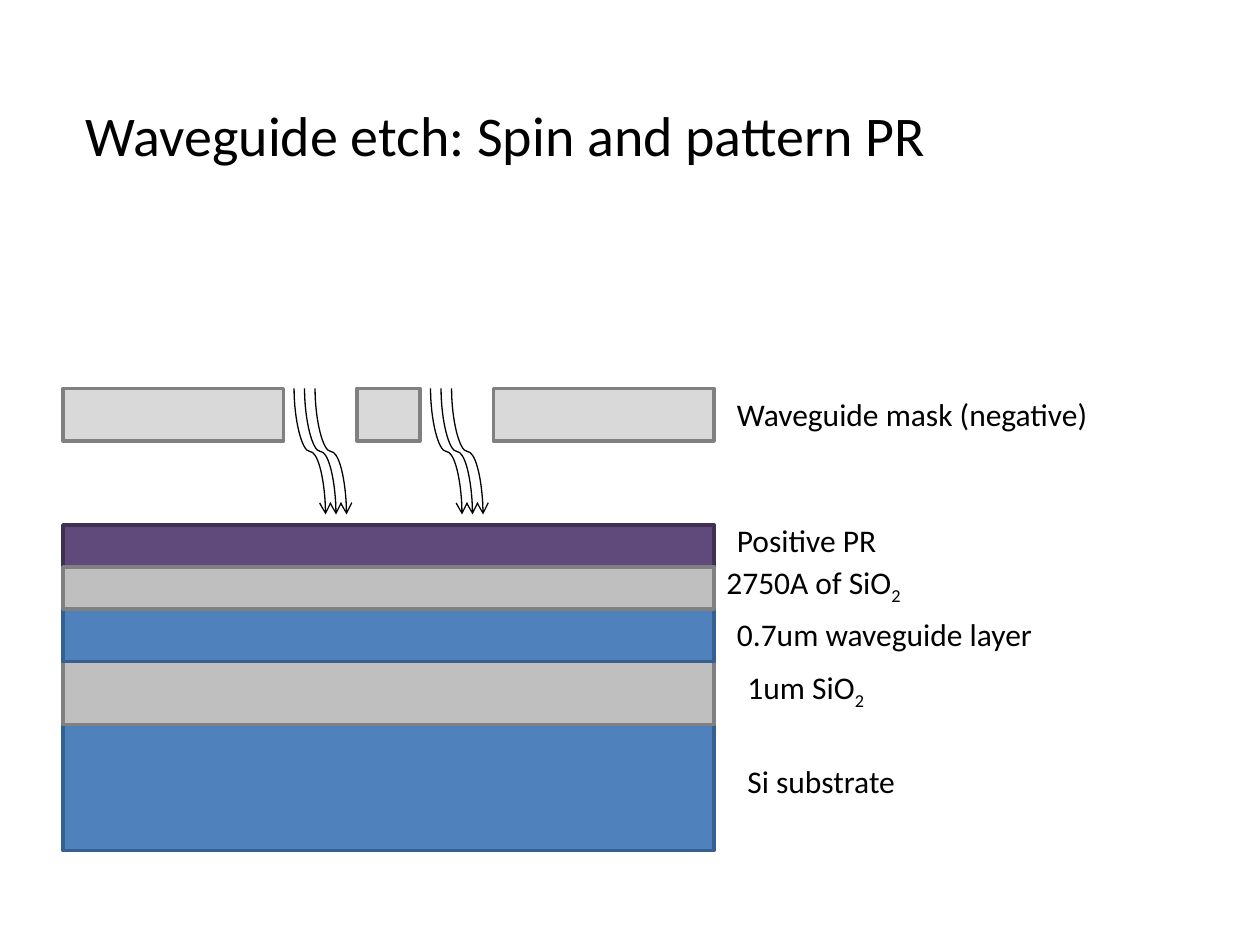
from dataclasses import dataclass

from lxml.etree import SubElement
from pptx import Presentation
from pptx.dml.color import RGBColor
from pptx.enum.shapes import MSO_CONNECTOR, MSO_SHAPE
from pptx.enum.text import MSO_AUTO_SIZE
from pptx.oxml.ns import qn
from pptx.util import Inches, Pt

CELLS_PER_INCH = 12
STACK_LEFT, STACK_WIDTH = 6, 62
MASK_TOP, MASK_HEIGHT = 37, 5
RAY_HEIGHT, RAY_SHIFT = 12, 3
LABEL_HEIGHT = 4.8


@dataclass
class Block:
    """A rectangle in grid cells."""
    left: float
    top: float
    width: float
    height: float
    fill: str
    line: str


@dataclass
class Label:
    """A caption in grid cells, with an optional subscript at its end."""
    text: str
    left: float
    top: float
    width: float
    subscript: str = ""
    size: int = 18
    height: float = LABEL_HEIGHT
    wrap: bool = False


def cells(count: float) -> int:
    return Inches(count / CELLS_PER_INCH)


def colour(value: str) -> RGBColor:
    return RGBColor.from_string(value)


def layer(top: float, height: float, fill: str, line: str) -> Block:
    return Block(STACK_LEFT, top, STACK_WIDTH, height, fill, line)


def mask(left: float, width: float) -> Block:
    return Block(left, MASK_TOP, width, MASK_HEIGHT, "D9D9D9", "808080")


def draw_block(page, block: Block) -> None:
    shape = page.shapes.add_shape(
        MSO_SHAPE.RECTANGLE, cells(block.left), cells(block.top),
        cells(block.width), cells(block.height))
    shape.shadow.inherit = False
    shape.fill.solid()
    shape.fill.fore_color.rgb = colour(block.fill)
    shape.line.color.rgb = colour(block.line)
    shape.line.width = Pt(2)


def draw_ray(page, left: float) -> None:
    """Draw a curve down from the mask, as a flat connector turned upright."""
    middle_x = left + RAY_SHIFT / 2
    middle_y = MASK_TOP + RAY_HEIGHT / 2
    ray = page.shapes.add_connector(
        MSO_CONNECTOR.CURVE,
        cells(middle_x + RAY_HEIGHT / 2), cells(middle_y - RAY_SHIFT / 2),
        cells(middle_x - RAY_HEIGHT / 2), cells(middle_y + RAY_SHIFT / 2))
    ray.line.color.rgb = colour("000000")
    ray.line.width = Pt(0.75)
    properties = ray._element.spPr
    properties.find(qn("a:xfrm")).set("rot", str(270 * 60000))
    SubElement(properties.find(qn("a:ln")), qn("a:tailEnd"), type="arrow")
    SubElement(properties, qn("a:effectLst"))


def draw_label(page, label: Label) -> None:
    box = page.shapes.add_textbox(cells(label.left), cells(label.top),
                                  cells(label.width), cells(label.height))
    frame = box.text_frame
    frame.text = label.text
    frame.word_wrap = label.wrap
    frame.auto_size = MSO_AUTO_SIZE.SHAPE_TO_FIT_TEXT
    para = frame.paragraphs[0]
    if label.subscript:
        span = para.add_run()
        span.text = label.subscript
        span.font._element.set("baseline", "-25000")
    for span in para.runs:
        span.font.name = "Calibri"
        span.font.size = Pt(label.size)
        span.font.color.rgb = colour("000000")


RESIST = layer(50, 4, "604A7B", "403152")
MASKS = [mask(6, 21), mask(47, 21), mask(34, 6)]
# From the substrate up, so that each layer overlaps the one below
LAYERS = [
    layer(69, 12, "4F81BD", "376092"),
    layer(63, 6, "BFBFBF", "808080"),
    layer(58, 5, "4F81BD", "376092"),
    layer(54, 4, "BFBFBF", "808080"),
]
RAY_GROUPS = [28, 41]
LABELS = [
    Label("Waveguide etch: Spin and pattern PR", 7, 9, 106,
          size=32, height=7.7, wrap=True),
    Label("Waveguide mask (negative)", 69, 37, 36.2),
    Label("Positive PR", 69, 49, 15.8),
    Label("2750A of SiO", 68, 53, 19.8, "2"),
    Label("0.7um waveguide layer", 69, 58, 30.8),
    Label("1um SiO", 70, 63, 14.3, "2"),
    Label("Si substrate", 70, 72, 16.6),
]


def main() -> None:
    deck = Presentation()
    deck.slide_width, deck.slide_height = Inches(10), Inches(7.5)
    page = deck.slides.add_slide(deck.slide_layouts[6])

    # Photoresist and mask
    for block in [RESIST, *MASKS]:
        draw_block(page, block)

    # Light through the mask openings
    for left in RAY_GROUPS:
        for step in range(3):
            draw_ray(page, left + step)

    # Layer stack
    for block in LAYERS:
        draw_block(page, block)

    # Title and captions
    for label in LABELS:
        draw_label(page, label)

    deck.save("out.pptx")


if __name__ == "__main__":
    main()
